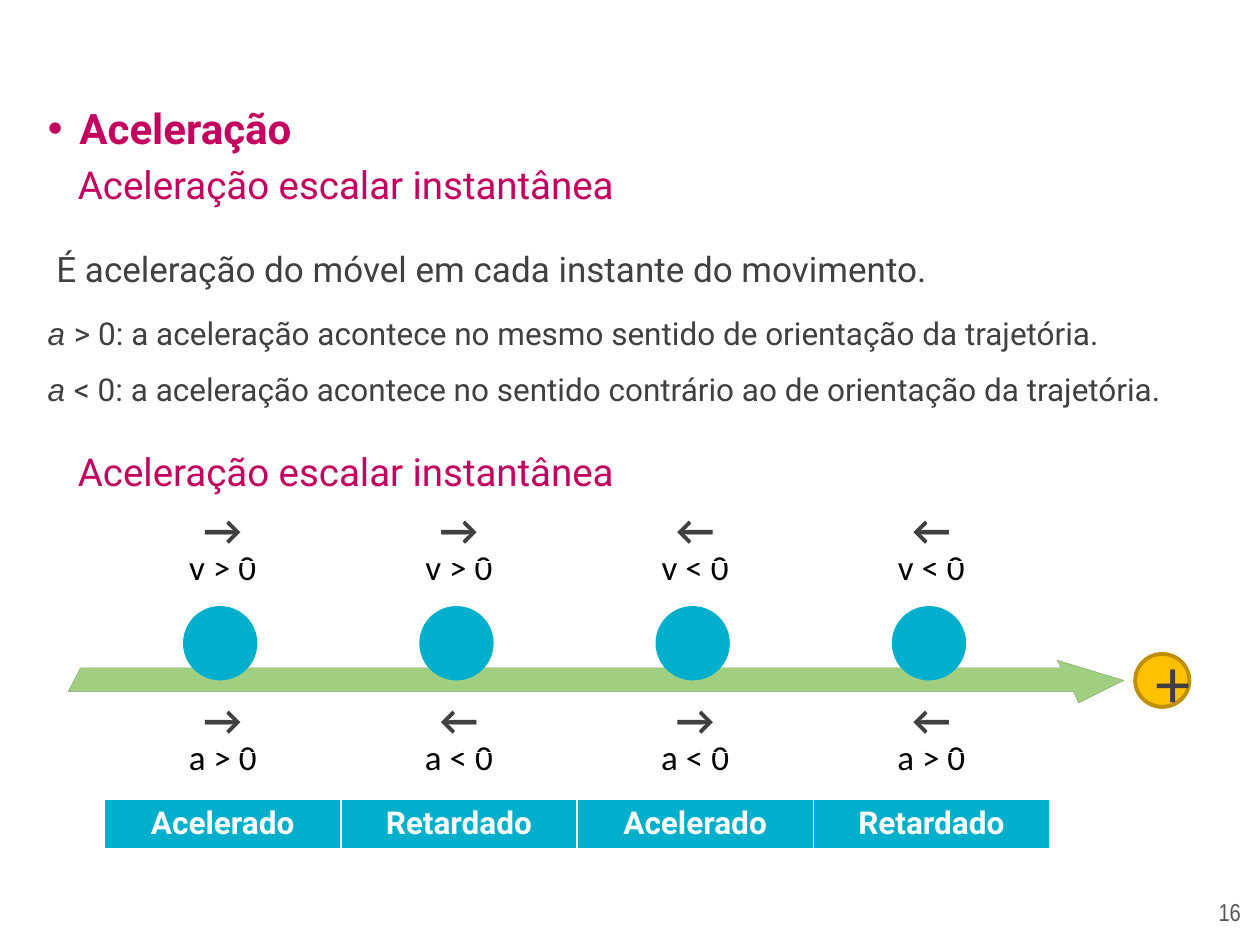
from lxml import etree
from pptx import Presentation
from pptx.dml.color import RGBColor
from pptx.enum.shapes import MSO_SHAPE
from pptx.enum.text import MSO_ANCHOR, PP_ALIGN
from pptx.oxml.ns import qn
from pptx.util import Inches, Pt

DOT = MSO_SHAPE.FLOWCHART_CONNECTOR
MID, TOP = MSO_ANCHOR.MIDDLE, MSO_ANCHOR.TOP
LEFT, CENTER = PP_ALIGN.LEFT, PP_ALIGN.CENTER

# Content
HEAD = "Aceleração"
SUB = "Aceleração escalar instantânea"
INTRO = " É aceleração do móvel em cada instante do movimento."
RULES = [
    "> 0: a aceleração acontece no mesmo sentido de orientação da trajetória.",
    "< 0: a aceleração acontece no sentido contrário ao de orientação da trajetória.",
]
SPEED_DIR = ["→", "→", "←", "←"]
SPEED = ["v > 0", "v > 0", "v < 0", "v < 0"]
ACCEL_DIR = ["→", "←", "→", "←"]
ACCEL = ["a > 0", "a < 0", "a < 0", "a > 0"]
KINDS = ["Acelerado", "Retardado", "Acelerado", "Retardado"]
PAGE = "16"

COLORS = {"pink": "C3005E", "dark": "404040", "black": "000000", "white": "FFFFFF",
          "cyan": "00AFCC", "green": "A0CF82", "edge": "86A872",
          "gold": "FFC000", "rim": "BF9000", "gray": "585858"}

# Grid: four equal columns shared by the tables and the balls
GRID_X, GRID_W = 0.83, 7.5
COL = GRID_W / 4
BALL, BALL_Y = 0.59, 4.81
SHIFT = -0.02
TRACK = [(0.64, 5.3), (8.42, 5.3), (8.39, 5.24), (8.92, 5.4),
         (8.56, 5.58), (8.52, 5.49), (0.54, 5.49)]


def rgb(name):
    return RGBColor.from_string(COLORS[name])


def add_run(para, text, size, font, color, bold=False, italic=False):
    run = para.add_run()
    run.text = text
    face = run.font
    face.size, face.name = Pt(size), font
    face.bold, face.italic = bold, italic
    face.color.rgb = rgb(color)


def add_box(slide, x, y, w, h, lines, pitch=None, align=LEFT, wrap=True):
    """Each line is a list of runs."""
    frame = slide.shapes.add_textbox(*map(Inches, (x, y, w, h))).text_frame
    frame.word_wrap = wrap
    for i, runs in enumerate(lines):
        para = frame.add_paragraph() if i else frame.paragraphs[0]
        para.alignment = align
        if pitch:
            para.line_spacing = Pt(pitch)
        for run in runs:
            add_run(para, *run)


def add_grid(slide, y, rows, heights, style, fill=None, tops=None):
    frame = slide.shapes.add_table(len(rows), 4, Inches(GRID_X), Inches(y),
                                   Inches(GRID_W), Inches(sum(heights)))
    table = frame.table
    table.first_row = table.horz_banding = False
    for r, row in enumerate(rows):
        table.rows[r].height = Inches(heights[r])
        for c, text in enumerate(row):
            cell = table.cell(r, c)
            cell.vertical_anchor = TOP
            if tops:
                cell.margin_top = Inches(tops[r])
            para = cell.text_frame.paragraphs[0]
            para.alignment = CENTER
            add_run(para, text, *style)
            if fill:
                add_edges(cell)
                cell.fill.solid()
                cell.fill.fore_color.rgb = rgb(fill)
            else:
                cell.fill.background()


def add_edges(cell):
    props = cell._tc.get_or_add_tcPr()
    for side, width in (("L", 1), ("R", 1), ("T", 1), ("B", 3)):
        line = etree.SubElement(props, qn("a:ln" + side), w=str(Pt(width)))
        solid = etree.SubElement(line, qn("a:solidFill"))
        etree.SubElement(solid, qn("a:srgbClr"), val=COLORS["white"])


def paint(shape, fill, line=None, width=1):
    shape.shadow.inherit = False
    shape.fill.solid()
    shape.fill.fore_color.rgb = rgb(fill)
    if line:
        shape.line.color.rgb = rgb(line)
        shape.line.width = Pt(width)
    else:
        shape.line.fill.background()


def add_dot(slide, x, y, w, h, *look):
    dot = slide.shapes.add_shape(DOT, *map(Inches, (x, y, w, h)))
    paint(dot, *look)
    return dot


def add_head(slide):
    body = slide.placeholders[1]
    body.left, body.top, body.width, body.height = map(Inches, (0.28, 0.81, 9.45, 5.99))
    para = body.text_frame.paragraphs[0]
    props = para._p.get_or_add_pPr()
    props.set("marL", str(Inches(0.25)))
    props.set("indent", str(-Inches(0.25)))
    para.line_spacing, para.space_before = 0.9, Pt(0)
    tint = etree.SubElement(props, qn("a:buClr"))
    etree.SubElement(tint, qn("a:srgbClr"), val=COLORS["pink"])
    etree.SubElement(props, qn("a:buFont"), typeface="Arial")
    etree.SubElement(props, qn("a:buChar"), char="•")
    add_run(para, HEAD, 24, "Roboto", "pink", True)


def main():
    deck = Presentation()
    deck.slide_width, deck.slide_height = Inches(10), Inches(7.5)
    slide = deck.slides.add_slide(deck.slide_layouts[1])
    title = slide.shapes.title._element
    title.getparent().remove(title)

    # Headings and explanation
    add_head(slide)
    add_box(slide, 0.28, 1.89, 7.47, 0.47, [[(INTRO, 20, "Roboto", "dark")]], 26)
    for y in (1.23, 3.51):
        add_box(slide, 0.52, y, 4.5, 0.47, [[(SUB, 22, "Roboto", "pink")]], wrap=False)
    rules = [[("a ", 18, "Arial", "dark", False, True), (text, 18, "Roboto", "dark")]
             for text in RULES]
    add_box(slide, 0.28, 2.3, 9.45, 1, rules, 32)

    # Signs and direction arrows
    arrow = (24, "Calibri", "dark", True)
    add_grid(slide, 4.29, [SPEED, ACCEL], [1.17, 0.85],
             (20, "Calibri", "black"), tops=[0.05, 0.39])
    add_grid(slide, 3.96, [SPEED_DIR], [0.5], arrow)
    add_grid(slide, 5.47, [ACCEL_DIR], [0.5], arrow)

    # Track with its positive end
    first, *rest = [(Inches(x), Inches(y)) for x, y in TRACK]
    pen = slide.shapes.build_freeform(*first)
    pen.add_line_segments(rest, close=True)
    paint(pen.convert_to_shape(), "green", "edge", 0.25)
    plus = add_dot(slide, 9.01, 5.19, 0.43, 0.42, "gold", "rim", 2.25).text_frame
    plus.vertical_anchor = MID
    plus.paragraphs[0].alignment = CENTER
    add_run(plus.paragraphs[0], "+", 40, "Calibri", "dark")

    # One ball per column
    for i in range(4):
        x = GRID_X + COL * (i + 0.5) - BALL / 2 + SHIFT
        add_dot(slide, x, BALL_Y, BALL, BALL, "cyan")

    # Kind of motion and page number
    add_grid(slide, 6.34, [KINDS], [0.41], (18, "Roboto", "white", True), "cyan")
    add_box(slide, 9.44, 7.07, 0.64, 0.34,
            [[(PAGE, 14, "Arial Narrow", "gray")]], align=CENTER)
    deck.save("out.pptx")


if __name__ == "__main__":
    main()
